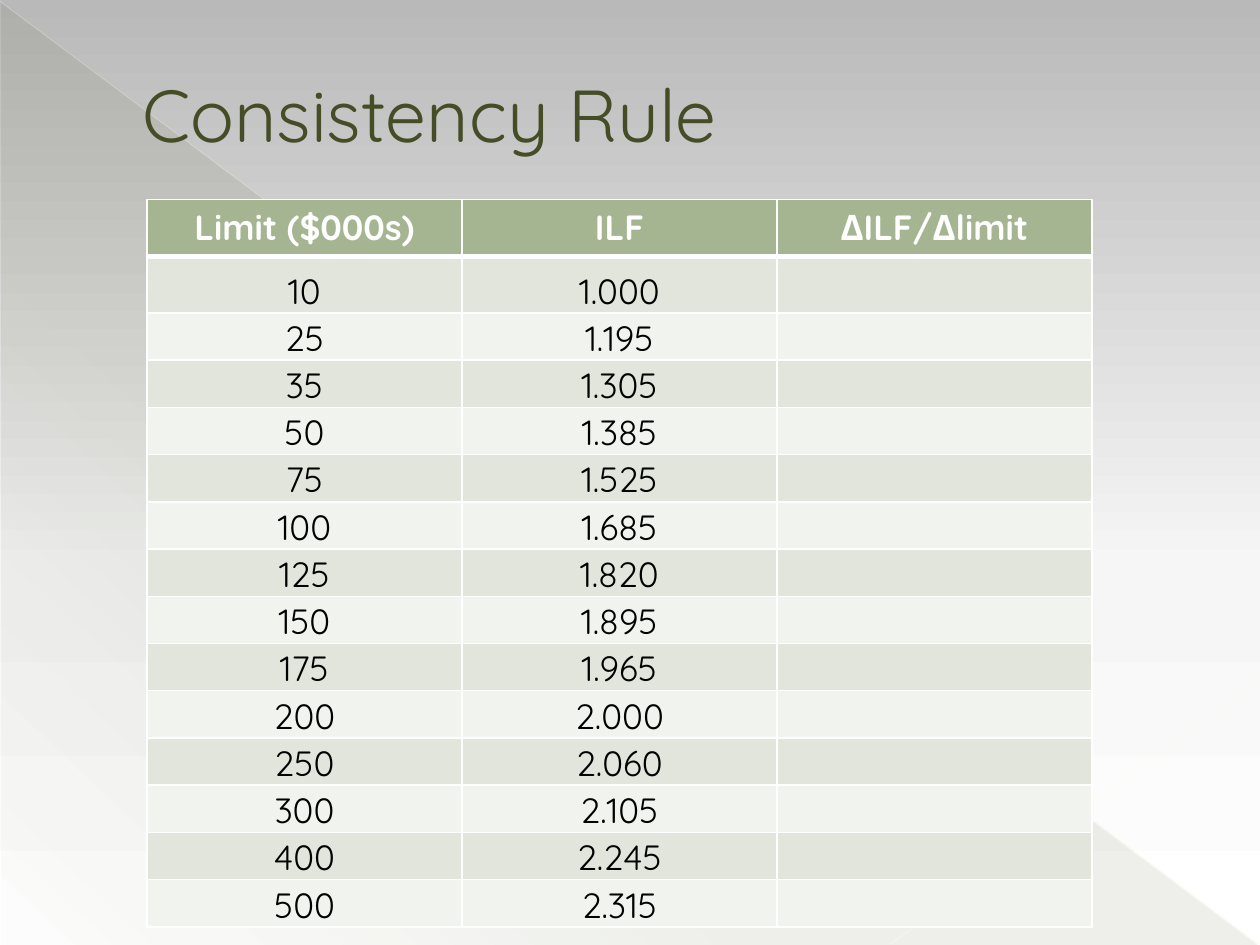
from typing import NamedTuple

from pptx import Presentation
from pptx.dml.color import RGBColor as RGB
from pptx.enum.shapes import MSO_CONNECTOR as Connector, MSO_SHAPE as Preset
from pptx.enum.text import MSO_ANCHOR as Anchor, PP_ALIGN as Align
from pptx.oxml.ns import qn
from pptx.util import Pt
from lxml.etree import SubElement

FONT = "Quicksand"
COLORS = {
    "olive": "444D26", "header": "A5B592", "band_dark": "E1E5DC",
    "band_light": "F0F3EE", "white": "FFFFFF", "black": "000000",
    "sky_top": "B9B9B9", "sky_mid": "F6F6F6",
    "cream": "FFFDE3", "pale_cream": "FFFDE6",
}


class Stop(NamedTuple):
    position: int
    color: str
    opacity: int = 100


class Ray(NamedTuple):
    start: tuple[float, float]
    end: tuple[float, float]
    color: str
    width: float
    opacity: int


class Rate(NamedTuple):
    limit: str
    factor: str
    slope: str = ""


HEADER = Rate("Limit ($000s)", "ILF", "ΔILF/Δlimit")
RATES = [
    Rate("10", "1.000"), Rate("25", "1.195"), Rate("35", "1.305"),
    Rate("50", "1.385"), Rate("75", "1.525"), Rate("100", "1.685"),
    Rate("125", "1.820"), Rate("150", "1.895"), Rate("175", "1.965"),
    Rate("200", "2.000"), Rate("250", "2.060"), Rate("300", "2.105"),
    Rate("400", "2.245"), Rate("500", "2.315"),
]
RAYS = [
    Ray((0, 0.72), (719.28, 539.28), "cream", 0.39, 35),
    Ray((720, 389.52), (509.04, 539.28), "pale_cream", 0.47, 45),
]
SKY = [Stop(0, "sky_top"), Stop(60, "sky_mid"), Stop(100, "white")]
SHADE = [Stop(0, "olive", 10), Stop(70, "olive", 8), Stop(100, "olive", 1)]


def add_color(parent, color: str, opacity: int = 100) -> None:
    node = SubElement(parent, qn("a:srgbClr"), val=COLORS[color])
    if opacity < 100:
        SubElement(node, qn("a:alpha"), val=str(opacity * 1000))


def set_gradient(fill, owner, stops: list[Stop], clockwise: int) -> None:
    fill.gradient()
    fill.gradient_angle = 360 - clockwise
    stop_list = owner.find(".//" + qn("a:gsLst"))
    for old_stop in list(stop_list):
        stop_list.remove(old_stop)
    for stop in stops:
        node = SubElement(stop_list, qn("a:gs"), pos=str(stop.position * 1000))
        add_color(node, stop.color, stop.opacity)


def add_ray(slide, ray: Ray) -> None:
    line = slide.shapes.add_connector(
        Connector.STRAIGHT, *(Pt(v) for v in ray.start + ray.end))
    line.line.width = Pt(ray.width)
    line.line.color.rgb = RGB.from_string(COLORS[ray.color])
    color = line.element.spPr.find(".//" + qn("a:srgbClr"))
    SubElement(color, qn("a:alpha"), val=str(ray.opacity * 1000))
    SubElement(line.element.spPr, qn("a:effectLst"))


def add_run(paragraph, text: str, size: float, color: str, bold: bool = False) -> None:
    run = paragraph.add_run()
    run.text = text
    run.font.name = FONT
    run.font.size = Pt(size)
    run.font.bold = bold
    run.font.color.rgb = RGB.from_string(COLORS[color])


def set_borders(cell, widths: dict[str, float]) -> None:
    properties = cell._tc.get_or_add_tcPr()
    for index, (side, width) in enumerate(widths.items()):
        border = SubElement(properties, qn(f"a:ln{side}"), w=str(Pt(width)))
        add_color(SubElement(border, qn("a:solidFill")), "white")
        properties.insert(index, border)


def fill_row(table, row: int, rate: Rate) -> None:
    is_header = row == 0
    band = "header" if is_header else "band_dark" if row % 2 else "band_light"
    for column, text in enumerate(rate):
        cell = table.cell(row, column)
        cell.fill.solid()
        cell.fill.fore_color.rgb = RGB.from_string(COLORS[band])
        set_borders(cell, {"L": 1, "R": 1, "T": 3 if row == 1 else 1,
                           "B": 3 if is_header else 1})
        if not is_header:
            cell.vertical_anchor = Anchor.BOTTOM
            cell.margin_left = cell.margin_right = cell.margin_top = Pt(0.72)
            cell.margin_bottom = 0
        if text:
            paragraph = cell.text_frame.paragraphs[0]
            paragraph.alignment = Align.CENTER
            add_run(paragraph, text, 20, "white" if is_header else "black", is_header)


def add_rate_table(slide) -> None:
    rows = [HEADER, *RATES]
    table = slide.shapes.add_table(
        len(rows), len(HEADER), Pt(84), Pt(114), Pt(540), Pt(415.8)).table
    table.horz_banding = False
    for column in table.columns:
        column.width = Pt(180)
    for index, rate in enumerate(rows):
        # The header and the row below it are taller
        table.rows[index].height = Pt(32.4 if index < 2 else 27)
        fill_row(table, index, rate)


def add_title(slide, text: str) -> None:
    title = slide.shapes.title
    title.left, title.top, title.width, title.height = Pt(36), Pt(21), Pt(648), Pt(87)
    title.text_frame.vertical_anchor = Anchor.MIDDLE
    paragraph = title.text_frame.paragraphs[0]
    paragraph.alignment = Align.LEFT
    paragraph._p.get_or_add_pPr().set("marL", str(Pt(38.16)))
    add_run(paragraph, text, 42, "olive")
    slide.shapes.element.append(title.element)  # bring to front


def main() -> None:
    deck = Presentation()
    deck.slide_width, deck.slide_height = Pt(720), Pt(540)
    slide = deck.slides.add_slide(deck.slide_layouts[5])

    # Backdrop: sky gradient, shaded triangle, light rays
    set_gradient(slide.background.fill, slide.element, SKY, 90)
    triangle = slide.shapes.add_shape(
        Preset.RIGHT_TRIANGLE, Pt(0.72), Pt(1.44), Pt(718.56), Pt(538.56))
    triangle.shadow.inherit = False
    triangle.line.fill.background()
    set_gradient(triangle.fill, triangle.element, SHADE, 133)
    for ray in RAYS:
        add_ray(slide, ray)

    # Content
    add_rate_table(slide)
    add_title(slide, "Consistency Rule")
    deck.save("out.pptx")


if __name__ == "__main__":
    main()
